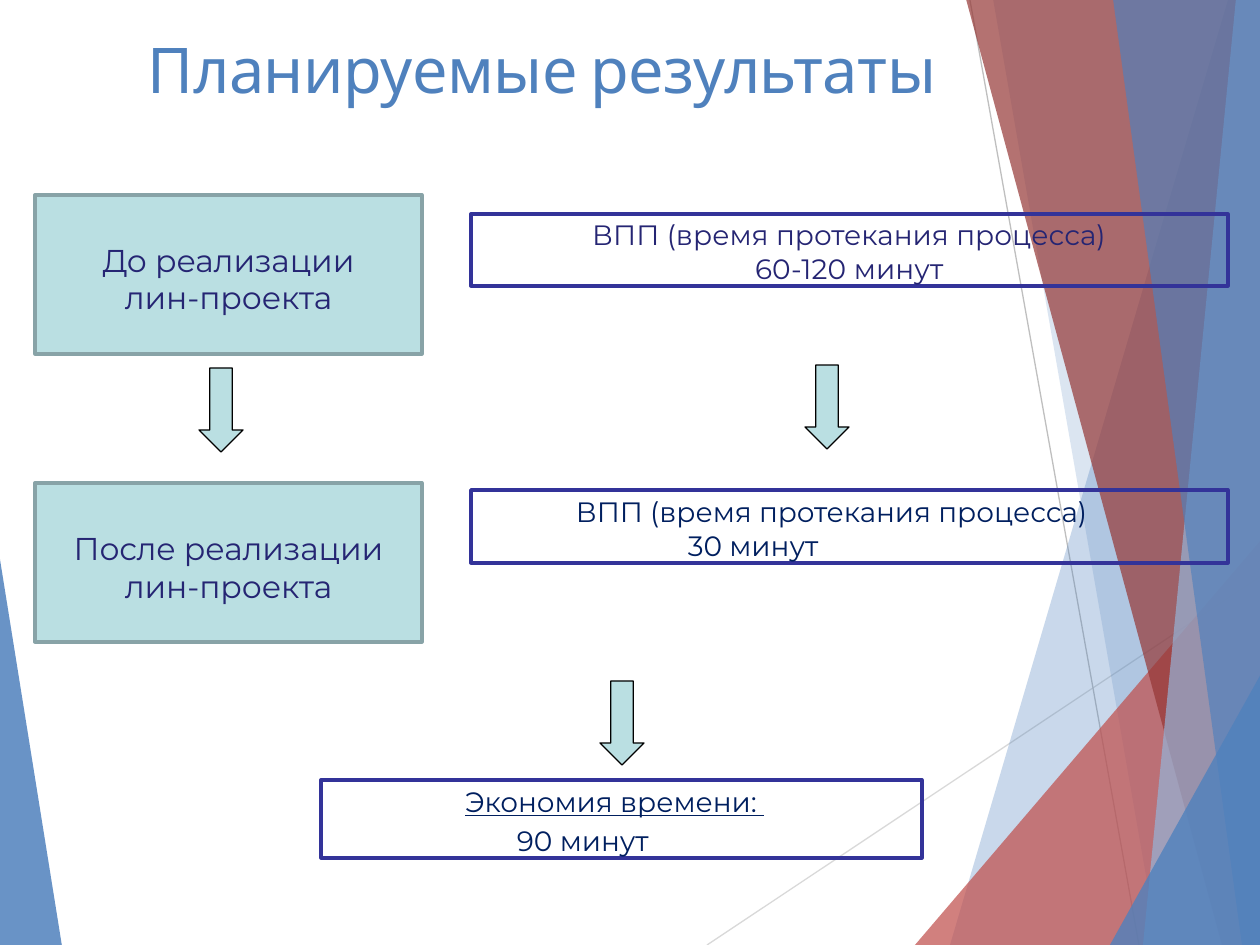
from dataclasses import dataclass

from lxml import etree
from pptx import Presentation
from pptx import util as u
from pptx.dml.color import RGBColor
from pptx.enum import shapes, text
from pptx.oxml.ns import qn

PX = u.Inches(1) / 126


def px(length):
    return u.Emu(round(length * PX))


@dataclass(frozen=True)
class Theme:
    blue: str = "4F81BD"
    light_blue: str = "95B3D7"
    red: str = "C0504D"
    dark_red: str = "953735"
    grey: str = "BFBFBF"
    light_grey: str = "D9D9D9"
    mint: str = "BADFE2"
    mint_edge: str = "88A3A7"
    frame: str = "333399"
    indigo: str = "252573"
    navy: str = "001F5F"
    black: str = "000000"
    title_font: str = "Cabin"
    body_font: str = "Montserrat"
    title_size: int = 36
    stage_size: int = 18
    result_size: int = 16


def write(paragraph, words, *, font, size, color, align=text.PP_ALIGN.LEFT,
          indent=0, before=0, underline=False, tracking=0):
    """Fill a paragraph; indent is in px, before and tracking are in points."""
    paragraph.alignment = align
    paragraph.space_before = u.Pt(before)
    paragraph.line_spacing = 1.0
    paragraph._p.get_or_add_pPr().set("marL", str(px(indent)))
    run = paragraph.add_run()
    run.text = words
    run.font.name, run.font.size = font, u.Pt(size)
    run.font.color.rgb = RGBColor.from_string(color)
    run.font.underline = underline
    if tracking:
        run.font._element.set("spc", str(round(tracking * 100)))


class SlideBuilder:
    def __init__(self, slide, theme):
        self.slide, self.theme = slide, theme

    def paint(self, shape, fill=None, line=None, width=1.92, opacity=100):
        shape.shadow.inherit = False
        if fill:
            shape.fill.solid()
            shape.fill.fore_color.rgb = RGBColor.from_string(fill)
            if opacity < 100:
                color = shape.fill._xPr.find(".//" + qn("a:srgbClr"))
                etree.SubElement(color, qn("a:alpha"), val=str(opacity * 1000))
        else:
            shape.fill.background()
        if line:
            shape.line.color.rgb = RGBColor.from_string(line)
            shape.line.width = u.Pt(width)
        else:
            shape.line.fill.background()

    def facet(self, corners, color, opacity):
        outline = self.slide.shapes.build_freeform(*corners[0], scale=PX)
        outline.add_line_segments(corners[1:], close=True)
        self.paint(outline.convert_to_shape(), color, opacity=opacity)

    def ray(self, start, end, color):
        ray = self.slide.shapes.add_connector(
            shapes.MSO_CONNECTOR.STRAIGHT, *map(px, start + end))
        ray.line.color.rgb = RGBColor.from_string(color)
        ray.line.width = u.Pt(0.75)
        etree.SubElement(ray._element.spPr, qn("a:effectLst"))

    def title(self, words, left, top, width, height):
        title = self.slide.shapes.title
        title.element.getparent().append(title.element)  # in front of the backdrop
        title.left, title.top, title.width, title.height = map(
            px, (left, top, width, height))
        self.set_frame(title.text_frame, 1, text.MSO_ANCHOR.TOP)
        write(title.text_frame.paragraphs[0], words, font=self.theme.title_font,
              size=self.theme.title_size, color=self.theme.blue, before=0.9,
              tracking=-0.35)

    def set_frame(self, frame, top, anchor):
        frame.word_wrap = True
        frame.vertical_anchor = anchor
        frame.margin_left = frame.margin_right = frame.margin_bottom = 0
        frame.margin_top = px(top)

    def box(self, area, lines, *, inset, anchor, fill=None, line=None, **style):
        """Draw a framed box; each line is its words and its own format."""
        box = self.slide.shapes.add_shape(
            shapes.MSO_SHAPE.RECTANGLE, *map(px, area))
        self.paint(box, fill, line)
        frame = box.text_frame
        self.set_frame(frame, inset, anchor)
        for number, (words, own) in enumerate(lines):
            paragraph = frame.add_paragraph() if number else frame.paragraphs[0]
            write(paragraph, words, font=self.theme.body_font, **{**style, **own})

    def stage(self, top, lines):
        self.box((35, top, 387, 159), [(words, {}) for words in lines],
                 inset=8, anchor=text.MSO_ANCHOR.MIDDLE, fill=self.theme.mint,
                 line=self.theme.mint_edge, size=self.theme.stage_size,
                 color=self.theme.indigo, align=text.PP_ALIGN.CENTER,
                 tracking=-0.05)

    def result(self, area, color, lines, inset=5):
        self.box(area, lines, inset=inset, anchor=text.MSO_ANCHOR.TOP,
                 line=self.theme.frame, size=self.theme.result_size, color=color)

    def down_arrow(self, left, top):
        arrow = self.slide.shapes.add_shape(
            shapes.MSO_SHAPE.DOWN_ARROW, *map(px, (left, top, 44, 84)))
        arrow.adjustments[0], arrow.adjustments[1] = 0.51, 0.5
        self.paint(arrow, self.theme.mint, self.theme.black, 0.72)


def draw_backdrop(page):
    theme = page.theme
    right, bottom = 1261, 945
    page.facet([(-1, 553), (62, 946), (-1, bottom)], theme.blue, 85)
    page.ray((707, bottom), (right, 576), theme.light_grey)
    page.ray((970, 0), (1139, bottom), theme.grey)
    for top_left, bottom_left, color, opacity in (
        ((1228, 0), (950, bottom), theme.blue, 30),
        ((993, -1), (1158, bottom), theme.blue, 20),
        ((right, 540), (915, bottom), theme.red, 72),
        ((966, -1), (1222, bottom), theme.dark_red, 70),
        ((1236, -1), (1143, bottom), theme.light_blue, 70),
        ((1113, -1), (1242, bottom), theme.blue, 65),
        ((right, 674), (1110, bottom), theme.blue, 80),
    ):
        edge = [(right, bottom)]
        if top_left[0] < right:
            edge.append((right, top_left[1]))
        page.facet([top_left, bottom_left, *edge], color, opacity)


def main():
    deck = Presentation()
    deck.slide_width, deck.slide_height = px(1260), px(945)
    theme = Theme()
    page = SlideBuilder(deck.slides.add_slide(deck.slide_layouts[5]), theme)
    draw_backdrop(page)
    page.title("Планируемые результаты", 148, 29, 794, 78)

    page.stage(195, ["До реализации", "лин-проекта"])
    page.stage(483, ["После реализации", "лин-проекта"])

    centred = {"align": text.PP_ALIGN.CENTER}
    process = "ВПП (время протекания процесса)"
    page.result((471, 214, 757, 72), theme.indigo, [
        (process, {**centred, "before": 2.5, "tracking": 0.05}),
        ("60-120 минут", {**centred, "tracking": 0.1})], inset=4)
    page.result((471, 490, 757, 73), theme.navy, [
        (process, {"indent": 105, "before": 2.6}),
        ("30 минут", {"indent": 217})])
    page.result((321, 780, 601, 78), theme.navy, [
        ("Экономия времени: ", {"indent": 144, "before": 2.6, "underline": True}),
        ("90 минут", {"indent": 196, "before": 2.6})])

    for left, top in ((199, 368), (805, 365), (600, 681)):
        page.down_arrow(left, top)
    deck.save("out.pptx")


if __name__ == "__main__":
    main()
